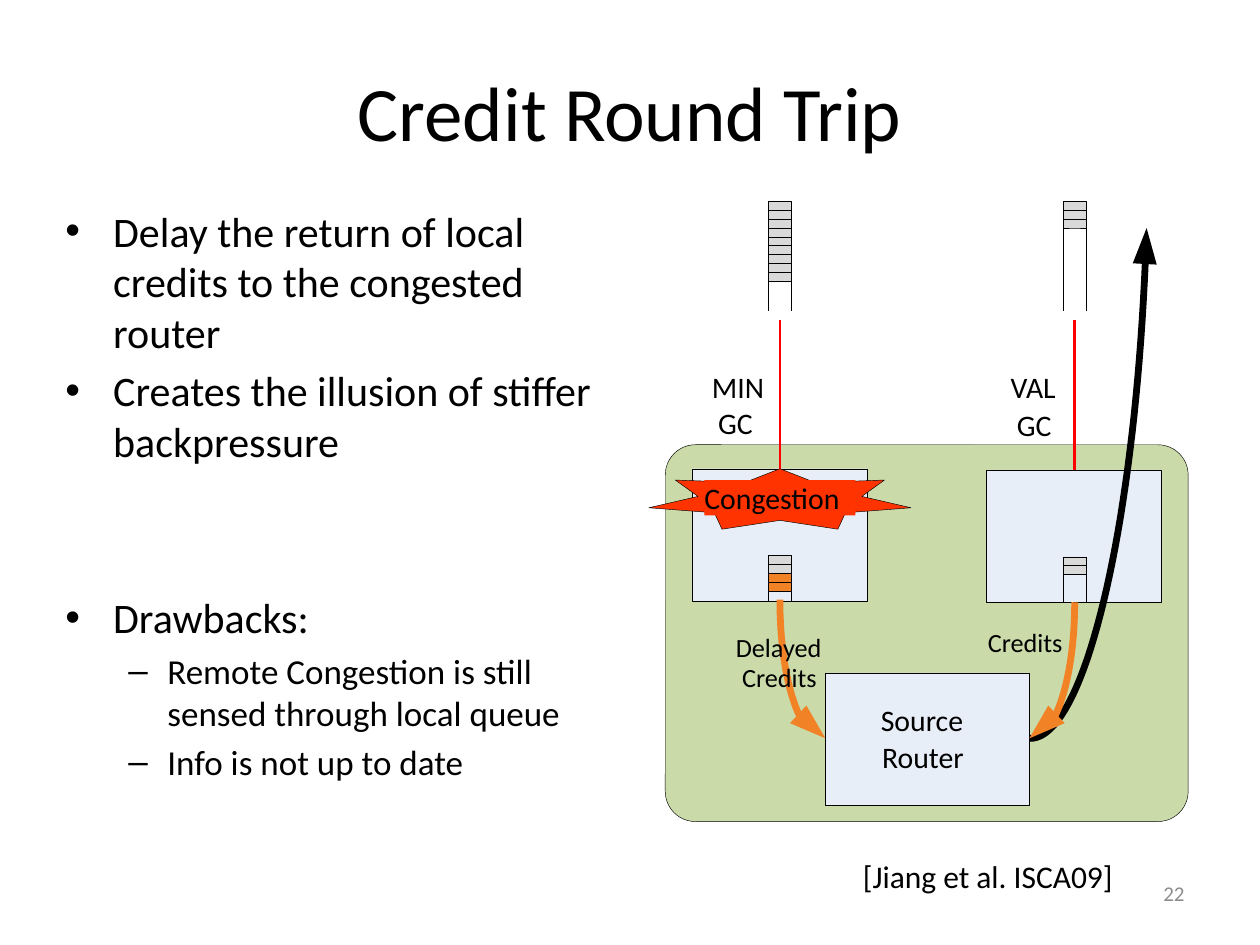
from lxml.etree import SubElement
from pptx import Presentation
from pptx.dml.color import RGBColor
from pptx.enum.shapes import MSO_CONNECTOR, MSO_SHAPE
from pptx.enum.text import MSO_ANCHOR, PP_ALIGN
from pptx.oxml.ns import qn
from pptx.util import Inches, Pt

BLACK = RGBColor(0x00, 0x00, 0x00)
GRAY = RGBColor(0x8C, 0x8C, 0x8C)
SLOT = RGBColor(0xD9, 0xD9, 0xD9)
GREEN = RGBColor(0xCA, 0xDA, 0xA9)
PALE = RGBColor(0xE8, 0xEE, 0xF7)
RED = RGBColor(0xFF, 0x00, 0x00)
FLAME = RGBColor(0xFF, 0x33, 0x00)
ORANGE = RGBColor(0xF2, 0x82, 0x26)

HAIR = 0.25
SLOT_W = 0.18
SLOT_H = 0.07
MIN_X, VAL_X = 6.19, 8.53


class Deck:
    font = "Calibri"

    def __init__(self, prs):
        self.s = prs.slides.add_slide(prs.slide_layouts[6])

    def style(self, sp, fill=None, line=None, width=HAIR):
        sp.shadow.inherit = False
        if fill is None:
            sp.fill.background()
        else:
            sp.fill.solid()
            sp.fill.fore_color.rgb = fill
        if line is None:
            sp.line.fill.background()
        else:
            sp.line.color.rgb = line
            sp.line.width = Pt(width)
        return sp

    def box(self, x, y, w, h, fill, line=BLACK, kind=MSO_SHAPE.RECTANGLE):
        sp = self.s.shapes.add_shape(kind, Inches(x), Inches(y), Inches(w), Inches(h))
        return self.style(sp, fill, line)

    def line(self, x1, y1, x2, y2, color=BLACK, width=HAIR):
        sp = self.s.shapes.add_connector(
            MSO_CONNECTOR.STRAIGHT, Inches(x1), Inches(y1), Inches(x2), Inches(y2))
        sp.line.color.rgb = color
        sp.line.width = Pt(width)
        SubElement(sp._element.spPr, qn("a:effectLst"))

    def outline(self, points, closed=True, **look):
        pts = [(Inches(x), Inches(y)) for x, y in points]
        builder = self.s.shapes.build_freeform(*pts[0], scale=1.0)
        builder.add_line_segments(pts[1:], close=closed)
        return self.style(builder.convert_to_shape(), **look)

    def arrow(self, curve, head, color):
        steps = 40
        points = []
        for i in range(steps + 1):
            t = i / steps
            weights = ((1 - t) ** 3, 3 * t * (1 - t) ** 2, 3 * t * t * (1 - t), t ** 3)
            points.append([sum(k * c for k, c in zip(weights, axis)) for axis in zip(*curve)])
        self.outline(points, closed=False, line=color, width=3.88)
        self.outline(head, fill=color)

    def slots(self, x, y, count, fill):
        left = x - SLOT_W / 2
        self.box(left, y, SLOT_W, count * SLOT_H, fill)
        for i in range(1, count):
            self.line(left, y + i * SLOT_H, left + SLOT_W, y + i * SLOT_H)

    def queue(self, x, y, depth, count):
        self.slots(x, y, count, SLOT)
        for side in (x - SLOT_W / 2, x + SLOT_W / 2):
            self.line(side, y, side, y + depth)

    def frame(self, x, y, w, h, inset=True, anchor=MSO_ANCHOR.TOP):
        tf = self.s.shapes.add_textbox(
            Inches(x), Inches(y), Inches(w), Inches(h)).text_frame
        mx, my = (0.1, 0.05) if inset else (0, 0)
        form = {"word_wrap": True, "vertical_anchor": anchor,
                "margin_left": Inches(mx), "margin_right": Inches(mx),
                "margin_top": Inches(my), "margin_bottom": Inches(my)}
        for name, value in form.items():
            setattr(tf, name, value)
        return tf

    def run(self, p, text, size, color=BLACK, align=PP_ALIGN.LEFT):
        p.alignment = align
        r = p.add_run()
        r.text = text
        for name, value in {"name": self.font, "size": Pt(size)}.items():
            setattr(r.font, name, value)
        r.font.color.rgb = color

    def text(self, text, x, y, w, h, size, inset=False, anchor=MSO_ANCHOR.TOP, **look):
        tf = self.frame(x, y, w, h, inset, anchor)
        self.run(tf.paragraphs[0], text, size, **look)

    def bullets(self, x, y, w, h, items):
        tf = self.frame(x, y, w, h)
        levels = [("•", 24, 0.38, 0.38), ("–", 20, 0.81, 0.31)]
        for i, (level, before, text) in enumerate(items):
            p = tf.paragraphs[0] if i == 0 else tf.add_paragraph()
            char, size, margin, hang = levels[level]
            p.level = level
            p.space_before = Pt(before)
            self.run(p, text, size)
            pPr = p._p.get_or_add_pPr()
            pPr.set("marL", str(Inches(margin)))
            pPr.set("indent", str(-Inches(hang)))
            SubElement(pPr, qn("a:buFont"), typeface="Arial")
            SubElement(pPr, qn("a:buChar"), char=char)


def main():
    prs = Presentation()
    prs.slide_width, prs.slide_height = Inches(10), Inches(7.5)
    d = Deck(prs)

    d.text("22", 7.17, 6.83, 2.33, 0.52, 12, inset=True, anchor=MSO_ANCHOR.MIDDLE,
           color=GRAY, align=PP_ALIGN.RIGHT)
    d.text("Credit Round Trip", 0.5, 0.25, 9, 1.25, 44, inset=True,
           anchor=MSO_ANCHOR.MIDDLE, align=PP_ALIGN.CENTER)
    d.bullets(0.42, 1.58, 4.42, 4.95, [
        (0, 4.8, "Delay the return of local credits to the congested router"),
        (0, 4.8, "Creates the illusion of stiffer backpressure"),
        (0, 72, "Drawbacks:"),
        (1, 4, "Remote Congestion is still sensed through local queue"),
        (1, 4, "Info is not up to date"),
    ])

    group = d.box(5.28, 3.53, 4.15, 2.99, GREEN, kind=MSO_SHAPE.ROUNDED_RECTANGLE)
    group.adjustments[0] = 0.08
    d.box(6.55, 5.34, 1.62, 1.05, PALE)
    for x, top, count in ((MIN_X, 3.72, 9), (VAL_X, 3.73, 3)):
        d.box(x - 0.7, top, 1.39, 1.05, PALE)
        d.line(x, 2.54, x, top, RED, 1.5)
        d.queue(x, 1.6, 0.87, count)
        d.queue(x, top + 0.69, 0.36, 2)
    d.slots(MIN_X, 4.55, 2, ORANGE)

    d.arrow([(8.17, 5.86), (8.6, 5.88), (9, 4.22), (9.09, 2.07)],
            [(8.99, 2.09), (9.1, 1.81), (9.18, 2.1)], BLACK)

    half = [(0, 3.72), (0.28, 3.83), (0.83, 3.81), (0.65, 3.94),
            (1.04, 4.03), (0.52, 4.07), (0.46, 4.2), (0, 4.13)]
    burst = [(MIN_X - dx, y) for dx, y in half]
    burst += [(MIN_X + dx, y) for dx, y in half[-2:0:-1]]
    d.outline(burst, fill=FLAME, line=BLACK)
    d.box(5.59, 3.81, 1.2, 0.28, FLAME, line=None)

    d.arrow([(6.19, 4.76), (6.19, 5.14), (6.25, 5.49), (6.35, 5.69)],
            [(6.4, 5.6), (6.55, 5.86), (6.27, 5.74)], ORANGE)
    d.arrow([(8.53, 4.78), (8.53, 5.15), (8.47, 5.49), (8.37, 5.69)],
            [(8.45, 5.74), (8.17, 5.86), (8.32, 5.6)], ORANGE)

    for text, x, y, w, size in (
        ("Source", 6.99, 5.57, 0.75, 17),
        ("Router", 7, 5.86, 0.71, 17),
        ("Congestion", 5.59, 3.81, 1.2, 17),
        ("Delayed", 5.84, 5.01, 0.77, 15),
        ("Credits", 5.89, 5.25, 0.66, 15),
        ("Credits", 7.84, 4.97, 0.66, 15),
        ("MIN", 5.65, 2.93, 0.5, 17),
        ("GC", 5.7, 3.21, 0.35, 17),
        ("VAL", 8.02, 2.93, 0.45, 17),
        ("GC", 8.07, 3.23, 0.35, 17),
    ):
        d.text(text, x, y, w, 0.28 if size == 17 else 0.25, size)
    d.text("[Jiang et al. ISCA09]", 6.75, 6.75, 2.21, 0.4, 18, inset=True)

    prs.save("out.pptx")


if __name__ == "__main__":
    main()
